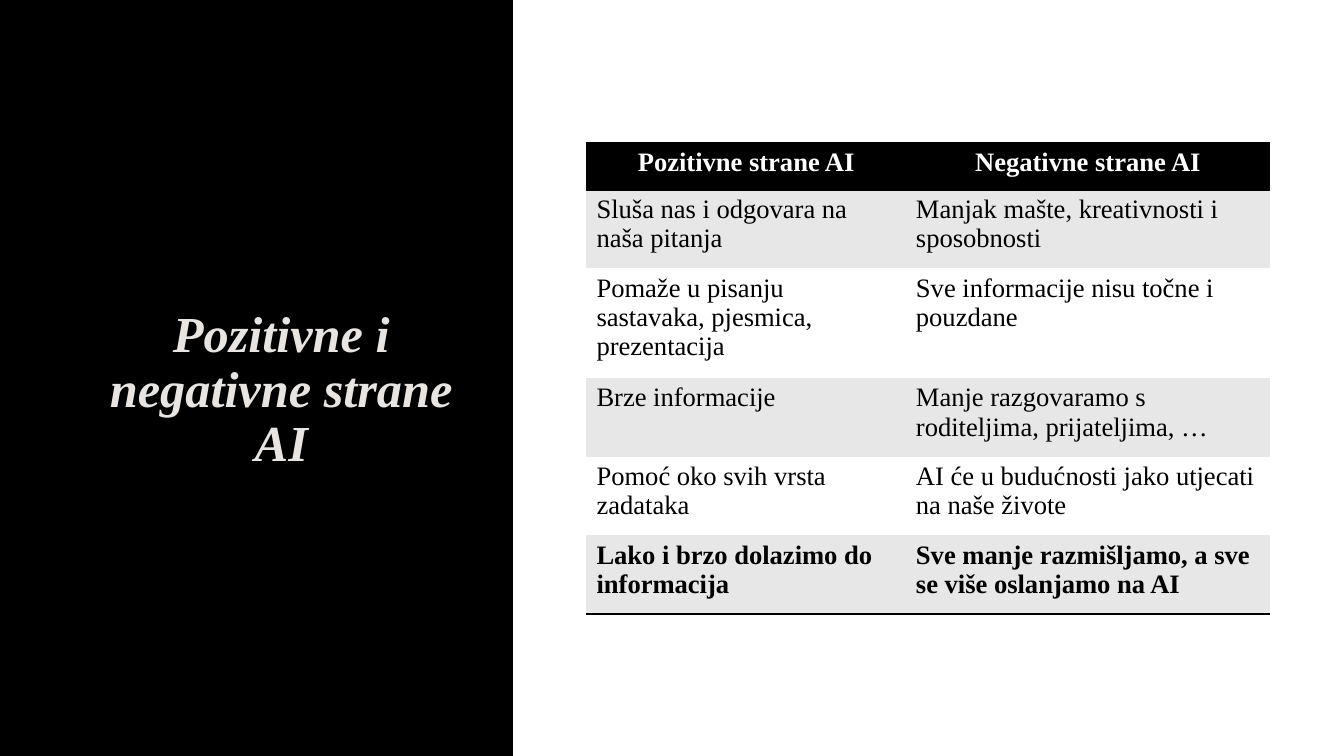
import dataclasses
import typing

import lxml.etree
import pptx
import pptx.dml.color
import pptx.enum.shapes
import pptx.enum.text
import pptx.oxml
import pptx.oxml.ns
import pptx.util

Cm = pptx.util.Cm
Pt = pptx.util.Pt
ALIGN = pptx.enum.text.PP_ALIGN
ANCHOR = pptx.enum.text.MSO_ANCHOR
NO_GRID = "{2D5ABB26-0587-4C30-8999-92F81FD0307C}"


@dataclasses.dataclass(frozen=True)
class Theme:
    font: str = "Times New Roman"
    black: str = "000000"
    white: str = "FFFFFF"
    band: str = "E7E7E7"
    cream: str = "E8E4E2"
    edge: str = "404040"
    head: float = 36
    text: float = 19
    rule: float = 2


@dataclasses.dataclass(frozen=True)
class Row:
    good: str
    bad: str
    tall: float
    fill: str
    ink: str = "000000"
    bold: bool = False
    align: typing.Any = ALIGN.LEFT
    rules: tuple[str, ...] = ()


THEME = Theme()
WIDTHS = (8.05, 9.17)
ROWS = (
    Row("Pozitivne strane AI", "Negativne strane AI", 1.17, THEME.black,
        THEME.white, True, ALIGN.CENTER, ("lnT", "lnB")),
    Row("Sluša nas i odgovara na naša pitanja",
        "Manjak mašte, kreativnosti i sposobnosti", 1.98, THEME.band),
    Row("Pomaže u pisanju sastavaka, pjesmica, prezentacija",
        "Sve informacije nisu točne i pouzdane", 2.77, THEME.white),
    Row("Brze informacije",
        "Manje razgovaramo s roditeljima, prijateljima, …", 1.98, THEME.band),
    Row("Pomoć oko svih vrsta zadataka",
        "AI će u budućnosti jako utjecati na naše živote", 1.98, THEME.white),
    Row("Lako i brzo dolazimo do informacija",
        "Sve manje razmišljamo, a sve se više oslanjamo na AI", 1.98,
        THEME.band, bold=True, rules=("lnB",)),
)


def paint(fill: typing.Any, tone: str) -> None:
    fill.solid()
    fill.fore_color.rgb = pptx.dml.color.RGBColor.from_string(tone)


def add_run(para: typing.Any, text: str, size: float, tone: str,
            bold: bool) -> typing.Any:
    run = para.add_run()
    run.text = text
    run.font.name = THEME.font
    run.font.size = Pt(size)
    run.font.bold = bold
    paint(run.font.fill, tone)
    return run


def make_line(tag: str, points: float, tone: str,
              alpha: int = 100) -> lxml.etree._Element:
    """Return a solid line element for a cell edge or a text outline."""
    return pptx.oxml.parse_xml(
        f'<a:{tag} {pptx.oxml.ns.nsdecls("a")} w="{Pt(points)}"><a:solidFill>'
        f'<a:srgbClr val="{tone}"><a:alpha val="{alpha * 1000}"/></a:srgbClr>'
        f'</a:solidFill><a:prstDash val="solid"/></a:{tag}>')


def add_title(slide: typing.Any) -> None:
    title = slide.shapes.title
    title.left, title.top = Cm(2.39), Cm(2.31)
    title.width, title.height = Cm(9.4), Cm(9.73)
    frame = title.text_frame
    frame.word_wrap = True
    frame.auto_size = pptx.enum.text.MSO_AUTO_SIZE.NONE
    frame.vertical_anchor = ANCHOR.BOTTOM
    para = frame.paragraphs[0]
    para.alignment = ALIGN.CENTER
    para.line_spacing = 0.9
    run = add_run(para, "Pozitivne i negativne strane AI", THEME.head,
                  THEME.cream, True)
    run.font.italic = True
    run.font._element.insert(0, make_line("ln", 0.75, THEME.edge, 10))


def add_panel(slide: typing.Any) -> None:
    panel = slide.shapes.add_shape(pptx.enum.shapes.MSO_SHAPE.RECTANGLE,
                                   Cm(12.93), 0, Cm(20.94), Cm(19.05))
    panel.shadow.inherit = False
    paint(panel.fill, THEME.white)
    panel.line.fill.background()


def fill_cell(cell: typing.Any, text: str, row: Row) -> None:
    paint(cell.fill, row.fill)
    para = cell.text_frame.paragraphs[0]
    para.alignment = row.align
    add_run(para, text, THEME.text, row.ink, row.bold)
    props = cell._tc.get_or_add_tcPr()
    for spot, tag in enumerate(row.rules):
        props.insert(spot, make_line(tag, THEME.rule, THEME.black))


def add_grid(slide: typing.Any) -> None:
    grid = slide.shapes.add_table(
        len(ROWS), len(WIDTHS), Cm(14.78), Cm(3.61), Cm(sum(WIDTHS)),
        Cm(sum(row.tall for row in ROWS))).table
    grid.horz_banding = False
    grid.first_row = False
    grid._tbl.tblPr.find(pptx.oxml.ns.qn("a:tableStyleId")).text = NO_GRID
    for col, width in zip(grid.columns, WIDTHS):
        col.width = Cm(width)
    for line, row in zip(grid.rows, ROWS):
        line.height = Cm(row.tall)
        for cell, text in zip(line.cells, (row.good, row.bad)):
            fill_cell(cell, text, row)


def main() -> None:
    deck = pptx.Presentation()
    deck.slide_width, deck.slide_height = Cm(33.87), Cm(19.05)
    slide = deck.slides.add_slide(deck.slide_layouts[5])
    paint(slide.background.fill, THEME.black)
    add_title(slide)
    add_panel(slide)
    add_grid(slide)
    deck.save("out.pptx")


if __name__ == "__main__":
    main()
